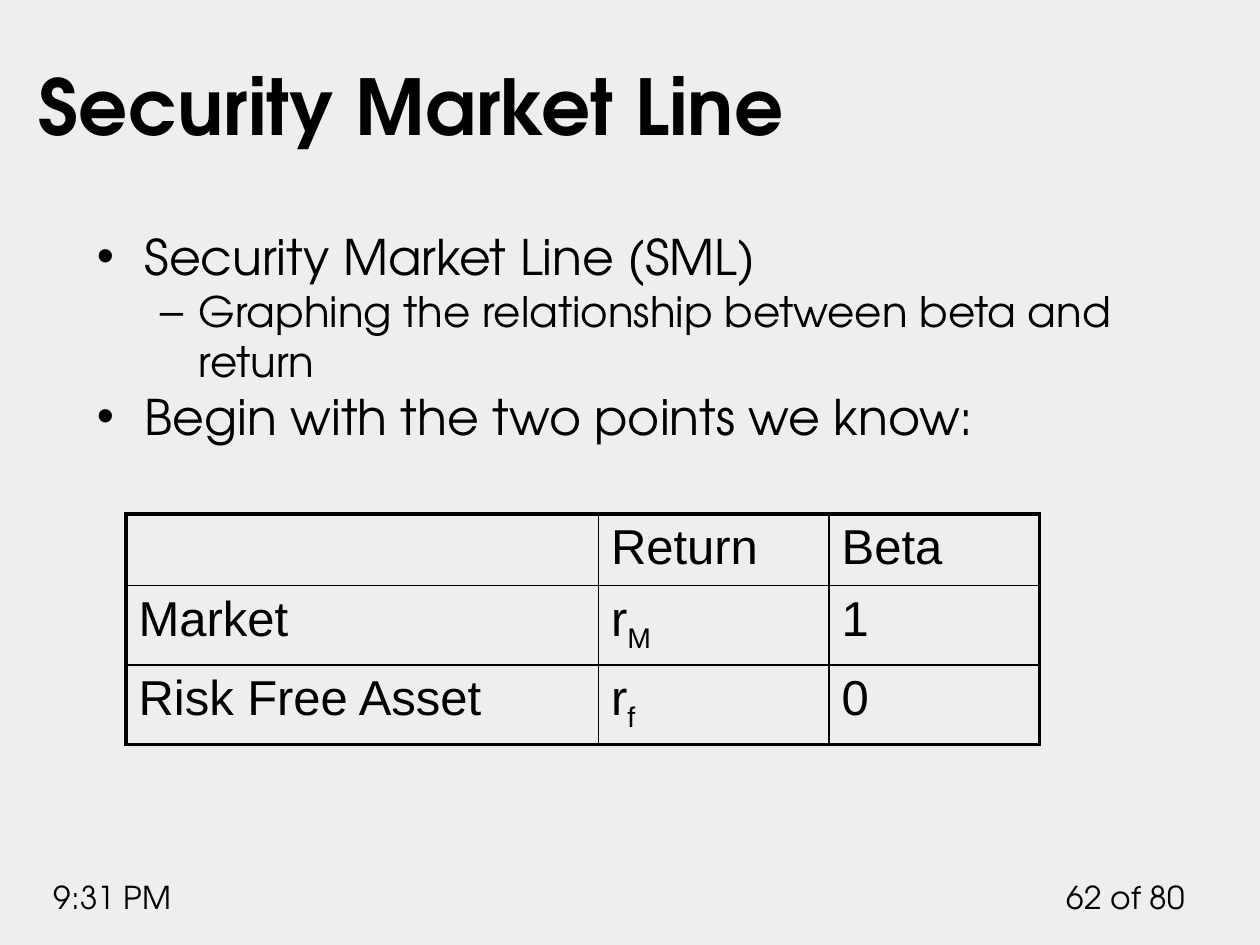
from lxml import etree
from pptx import Presentation
from pptx.dml.color import RGBColor
from pptx.enum.text import MSO_ANCHOR, PP_ALIGN
from pptx.oxml.ns import qn
from pptx.util import Inches, Pt

COLORS = {"background": "EEEEEE", "ink": "000000"}
HEADING_FONT = "TeX Gyre Adventor"
TABLE_FONT = "Arial"

TITLE = "Security Market Line"
TIME = "9:31 PM"
PAGE_NUMBER = "62 of 80"
BULLETS = [
    (0, "Security Market Line (SML)"),
    (1, "Graphing the relationship between beta and return"),
    (0, "Begin with the two points we know:"),
]
LEVELS = [
    {"mark": "•", "margin": 0.38, "hanging": 0.38, "size": 28},
    {"mark": "–", "margin": 0.81, "hanging": 0.31, "size": 24},
]
ROWS = [
    [("", ""), ("Return", ""), ("Beta", "")],
    [("Market", ""), ("r", "M"), ("1", "")],
    [("Risk Free Asset", ""), ("r", "f"), ("0", "")],
]
COLUMN_WIDTHS = [3.75, 1.83, 1.67]
ROW_HEIGHTS = [0.53, 0.6, 0.6]
OUTER_LINE, INNER_LINE = 2.25, 1


def style(font, size, name=HEADING_FONT, bold=False):
    font.name = name
    font.size = Pt(size)
    font.bold = bold
    font.color.rgb = RGBColor.from_string(COLORS["ink"])


def add_text(page, left, top, width, height, text="", size=18, bold=False,
             align=PP_ALIGN.LEFT, anchor=MSO_ANCHOR.TOP):
    box = page.shapes.add_textbox(Inches(left), Inches(top), Inches(width), Inches(height))
    frame = box.text_frame
    frame.word_wrap = True
    frame.vertical_anchor = anchor
    frame.text = text
    paragraph = frame.paragraphs[0]
    paragraph.alignment = align
    for span in paragraph.runs:
        style(span.font, size, bold=bold)
    return frame


def add_bullets(page):
    frame = add_text(page, 0.67, 1.75, 8.5, 4.83)
    frame.text = "\n".join(text for _, text in BULLETS)
    for paragraph, (depth, _) in zip(frame.paragraphs, BULLETS):
        level = LEVELS[depth]
        paragraph.level = depth
        properties = paragraph._p.get_or_add_pPr()
        properties.set("marL", str(Inches(level["margin"])))
        properties.set("indent", str(-Inches(level["hanging"])))
        etree.SubElement(properties, qn("a:buFont"), typeface=TABLE_FONT)
        etree.SubElement(properties, qn("a:buChar"), char=level["mark"])
        for span in paragraph.runs:
            style(span.font, level["size"])


def set_borders(cell, widths):
    properties = cell._tc.get_or_add_tcPr()
    for position, (side, width) in enumerate(widths.items()):
        line = etree.Element(qn(f"a:ln{side}"), w=str(Pt(width)))
        fill = etree.SubElement(line, qn("a:solidFill"))
        etree.SubElement(fill, qn("a:srgbClr"), val=COLORS["ink"])
        properties.insert(position, line)


def fill_cell(cell, text, subscript):
    paragraph = cell.text_frame.paragraphs[0]
    for part, baseline in ((text, None), (subscript, "-25000")):
        if part:
            span = paragraph.add_run()
            span.text = part
            style(span.font, 28, TABLE_FONT)
            if baseline:
                span._r.get_or_add_rPr().set("baseline", baseline)


def add_points_table(page):
    last_row, last_column = len(ROWS) - 1, len(COLUMN_WIDTHS) - 1
    table = page.shapes.add_table(
        len(ROWS), len(COLUMN_WIDTHS), Inches(1), Inches(4.08),
        Inches(sum(COLUMN_WIDTHS)), Inches(sum(ROW_HEIGHTS))).table
    table.first_row = table.horz_banding = False
    for column, width in zip(table.columns, COLUMN_WIDTHS):
        column.width = Inches(width)
    for row, height in zip(table.rows, ROW_HEIGHTS):
        row.height = Inches(height)
    for i, row in enumerate(ROWS):
        for j, (text, subscript) in enumerate(row):
            cell = table.cell(i, j)
            cell.fill.background()
            fill_cell(cell, text, subscript)
            outer = {"L": j == 0, "R": j == last_column, "T": i == 0, "B": i == last_row}
            set_borders(cell, {side: OUTER_LINE if edge else INNER_LINE
                               for side, edge in outer.items()})


def main():
    deck = Presentation()
    deck.slide_width, deck.slide_height = Inches(10), Inches(7.5)
    page = deck.slides.add_slide(deck.slide_layouts[6])
    page.background.fill.solid()
    page.background.fill.fore_color.rgb = RGBColor.from_string(COLORS["background"])
    add_text(page, 8.33, 6.92, 1.17, 0.4, PAGE_NUMBER, align=PP_ALIGN.RIGHT)
    add_text(page, 0.33, 6.92, 1.58, 0.4, TIME)
    add_text(page, 0.21, 0.25, 8.77, 1, TITLE, 44, True, anchor=MSO_ANCHOR.BOTTOM)
    add_bullets(page)
    add_points_table(page)
    deck.save("out.pptx")


if __name__ == "__main__":
    main()
